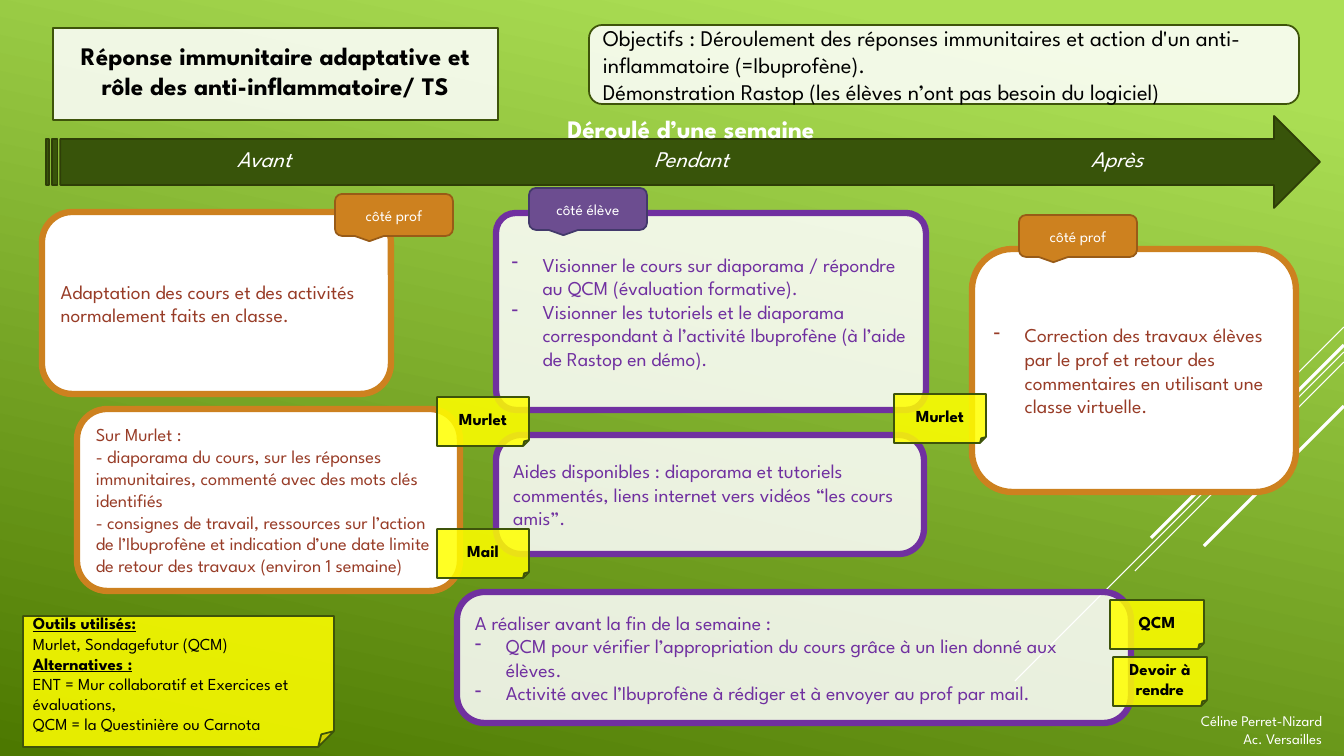
from dataclasses import dataclass, replace
from typing import NamedTuple

from lxml.etree import SubElement
from pptx import Presentation
from pptx.dml.color import RGBColor
from pptx.enum.shapes import MSO_CONNECTOR, MSO_SHAPE
from pptx.enum.text import MSO_ANCHOR, MSO_AUTO_SIZE, PP_ALIGN
from pptx.oxml.ns import qn
from pptx.util import Emu, Pt

PAGE_WIDTH, PAGE_HEIGHT = 1344, 756
EMU_PER_PX = 12192000 / PAGE_WIDTH


@dataclass(frozen=True)
class Theme:
    font: str = "League Spartan"
    gradient: tuple[str, str] = ("ACDF55", "4C7800")
    white: str = "FFFFFF"
    black: str = "000000"
    arrow: str = "38540A"
    arrow_edge: str = "2E3E07"
    edge: str = "3E540A"
    yellow: str = "FFFF00"
    orange: str = "CD811F"
    orange_edge: str = "985B17"
    brown: str = "983C27"
    purple: str = "7030A0"
    violet: str = "6C4D90"
    violet_edge: str = "43396B"
    heading: float = 18
    label: float = 16
    body: float = 14
    dense: float = 13
    note: float = 12
    tag: float = 11
    credit: float = 10.5


class Line(NamedTuple):
    text: str
    bulleted: bool = False
    heading: bool = False


class Ray(NamedTuple):
    top: int
    length: int
    weight: float


@dataclass(frozen=True)
class Type:
    size: float
    color: str
    bold: bool = False
    italic: bool = False
    align: PP_ALIGN = PP_ALIGN.LEFT


@dataclass(frozen=True)
class Look:
    shape: MSO_SHAPE
    fill: str
    edge: str
    type: Type
    weight: float = 1.25
    opacity: int = 100
    adjustment: int = 0


class Card(NamedTuple):
    box: tuple[int, int, int, int]
    look: Look | Type
    lines: tuple[Line, ...] = ()


THEME = Theme()
CENTER = PP_ALIGN.CENTER
HEADING = Type(THEME.heading, THEME.black, bold=True, align=CENTER)
PHASE = Type(THEME.label, THEME.white, italic=True)
CREDIT = Type(THEME.credit, THEME.white, align=PP_ALIGN.RIGHT)
TAG = Type(THEME.tag, THEME.white, align=CENTER)
NOTE = Type(THEME.note, THEME.black, bold=True, align=CENTER)

TOPIC = Look(MSO_SHAPE.ROUNDED_RECTANGLE, THEME.white, THEME.edge, HEADING, opacity=86)
GOALS = replace(TOPIC, type=Type(THEME.label, THEME.black))
TEACHER = Look(TOPIC.shape, THEME.white, THEME.orange, Type(THEME.body, THEME.brown), 4.5)
TEACHER_DENSE = replace(TEACHER, type=Type(THEME.dense, THEME.brown))
PUPIL = Look(TOPIC.shape, THEME.white, THEME.purple, Type(THEME.body, THEME.purple), 4.5, 86, 21100)
PUPIL_TALL = replace(PUPIL, adjustment=10000)
ARROW = Look(MSO_SHAPE.STRIPED_RIGHT_ARROW, THEME.arrow, THEME.arrow_edge, PHASE)
STICKY = Look(MSO_SHAPE.FOLDED_CORNER, THEME.yellow, THEME.edge, NOTE, 1.25, 86, 12100)
TOOLS = replace(STICKY, type=Type(THEME.note, THEME.black))
TEACHER_TAG = Look(MSO_SHAPE.ROUNDED_RECTANGULAR_CALLOUT, THEME.orange, THEME.orange_edge, TAG)
PUPIL_TAG = replace(TEACHER_TAG, fill=THEME.violet, edge=THEME.violet_edge)

TITLE = Card((53, 28, 445, 92), TOPIC, (
    Line("Réponse immunitaire adaptative et rôle des anti-inflammatoire/ TS"),))
RAYS = (Ray(327, 101, 0.75), Ray(352, 329, 0.75), Ray(362, 209, 0.75),
        Ray(345, 193, 2.25), Ray(406, 140, 2.25))
CARDS = (
    Card((77, 409, 383, 182), TEACHER_DENSE, (
        Line("Sur Murlet :"),
        Line("- diaporama du cours, sur les réponses immunitaires, commenté avec des mots clés identifiés"),
        Line("- consignes de travail, ressources sur l’action de l’Ibuprofène et indication d’une date "
             "limite de retour des travaux (environ 1 semaine)"))),
    Card((46, 116, 1274, 92), ARROW),
    Card((227, 140, 163, 37), PHASE, (Line("Avant"),)),
    Card((644, 140, 135, 37), PHASE, (Line("Pendant"),)),
    Card((1081, 140, 90, 37), PHASE, (Line("Après"),)),
    Card((23, 616, 311, 131), TOOLS, (
        Line("Outils utilisés:", heading=True),
        Line("Murlet, Sondagefutur (QCM)"),
        Line("Alternatives :", heading=True),
        Line("ENT = Mur collaboratif et Exercices et évaluations,"),
        Line("QCM = la Questinière ou Carnota"))),
    Card((42, 212, 349, 182), TEACHER, (
        Line("Adaptation des cours et des activités normalement faits en classe."),)),
    Card((589, 25, 710, 79), GOALS, (
        Line("Objectifs : Déroulement des réponses immunitaires et action d'un anti-inflammatoire (=Ibuprofène)."),
        Line("Démonstration Rastop (les élèves n’ont pas besoin du logiciel)"))),
    Card((496, 213, 430, 197), PUPIL_TALL, (
        Line("Visionner le cours sur diaporama / répondre au QCM (évaluation formative).", True),
        Line("Visionner les tutoriels et le diaporama correspondant à l’activité Ibuprofène "
             "(à l’aide de Rastop en démo).", True))),
    Card((496, 435, 428, 119), PUPIL, (
        Line("Aides disponibles : diaporama et tutoriels commentés, liens internet vers vidéos “les cours amis”."),)),
    Card((972, 249, 324, 243), TEACHER, (
        Line("Correction des travaux élèves par le prof et retour des commentaires en utilisant "
             "une classe virtuelle.", True),)),
    Card((457, 592, 674, 131), PUPIL, (
        Line("A réaliser avant la fin de la semaine :"),
        Line("QCM pour vérifier l’appropriation du cours grâce à un lien donné aux élèves.", True),
        Line("Activité avec l’Ibuprofène à rédiger et à envoyer au prof par mail.", True))),
    Card((335, 194, 118, 42), TEACHER_TAG, (Line("côté prof"),)),
    Card((529, 188, 118, 42), PUPIL_TAG, (Line("côté élève"),)),
    Card((1019, 215, 118, 42), TEACHER_TAG, (Line("côté prof"),)),
    Card((894, 394, 92, 49), STICKY, (Line("Murlet"),)),
    Card((1110, 600, 94, 49), STICKY, (Line("QCM"),)),
    Card((1113, 657, 94, 49), STICKY, (Line("Devoir à rendre"),)),
    Card((437, 397, 92, 49), STICKY, (Line("Murlet"),)),
    Card((1151, 707, 181, 45), CREDIT, (Line("Céline Perret-Nizard"), Line("Ac. Versailles"))),
    Card((538, 108, 306, 40), replace(HEADING, color=THEME.white), (Line("Déroulé d’une semaine"),)),
    Card((437, 529, 92, 49), STICKY, (Line("Mail"),)),
)


def px(length: int) -> Emu:
    return Emu(round(length * EMU_PER_PX))


def write(frame, lines: tuple[Line, ...], style: Type) -> None:
    frame.word_wrap = True
    for index, line in enumerate(lines):
        para = frame.add_paragraph() if index else frame.paragraphs[0]
        para.text, para.alignment = line.text, style.align
        if line.bulleted:
            properties = para._p.get_or_add_pPr()
            properties.set("marL", str(px(31)))
            properties.set("indent", str(px(-31)))
            SubElement(properties, qn("a:buChar"), char="-")
        font = para.font
        font.name, font.size = THEME.font, Pt(style.size)
        font.bold, font.italic, font.underline = style.bold or line.heading, style.italic, line.heading
        font.color.rgb = RGBColor.from_string(style.color)


def dress(shape, look: Look, lines: tuple[Line, ...]) -> None:
    shape.fill.solid()
    shape.fill.fore_color.rgb = RGBColor.from_string(look.fill)
    color = shape.element.spPr.find(f"{qn('a:solidFill')}/{qn('a:srgbClr')}")
    SubElement(color, qn("a:alpha"), val=str(look.opacity * 1000))
    shape.line.color.rgb = RGBColor.from_string(look.edge)
    shape.line.width = Pt(look.weight)
    shape.text_frame.vertical_anchor = MSO_ANCHOR.MIDDLE
    write(shape.text_frame, lines, look.type)


def draw_title(page, card: Card) -> None:
    title = page.shapes.title
    title.left, title.top, title.width, title.height = map(px, card.box)
    SubElement(title.element.spPr, qn("a:prstGeom"), prst="roundRect")
    title.text_frame.auto_size = MSO_AUTO_SIZE.NONE
    title.text_frame.margin_bottom = px(12)
    dress(title, card.look, card.lines)


def draw_ray(page, ray: Ray) -> None:
    line = page.shapes.add_connector(MSO_CONNECTOR.STRAIGHT, px(PAGE_WIDTH), px(ray.top),
                                     px(PAGE_WIDTH - ray.length), px(ray.top + ray.length))
    line.line.color.rgb = RGBColor.from_string(THEME.white)
    line.line.width = Pt(ray.weight)
    SubElement(line.element.spPr, qn("a:effectLst"))


def draw_card(page, card: Card) -> None:
    box = map(px, card.box)
    if isinstance(card.look, Type):
        frame = page.shapes.add_textbox(*box).text_frame
        frame.auto_size = MSO_AUTO_SIZE.SHAPE_TO_FIT_TEXT
        write(frame, card.lines, card.look)
        return
    shape = page.shapes.add_shape(card.look.shape, *box)
    shape.shadow.inherit = False
    if card.look.adjustment:
        guides = shape.element.spPr.find(f"{qn('a:prstGeom')}/{qn('a:avLst')}")
        guides.clear()
        SubElement(guides, qn("a:gd"), name="adj", fmla=f"val {card.look.adjustment}")
    dress(shape, card.look, card.lines)


def main() -> None:
    deck = Presentation()
    deck.slide_width, deck.slide_height = px(PAGE_WIDTH), px(PAGE_HEIGHT)
    page = deck.slides.add_slide(deck.slide_layouts.get_by_name("Title Only"))
    fill = page.background.fill
    fill.gradient()
    fill.gradient_angle = 258
    for stop, position, color in zip(fill.gradient_stops, (0.1, 1), THEME.gradient):
        stop.position, stop.color.rgb = position, RGBColor.from_string(color)
    draw_title(page, TITLE)
    for ray in RAYS:
        draw_ray(page, ray)
    for card in CARDS:
        draw_card(page, card)
    deck.save("out.pptx")


if __name__ == "__main__":
    main()
